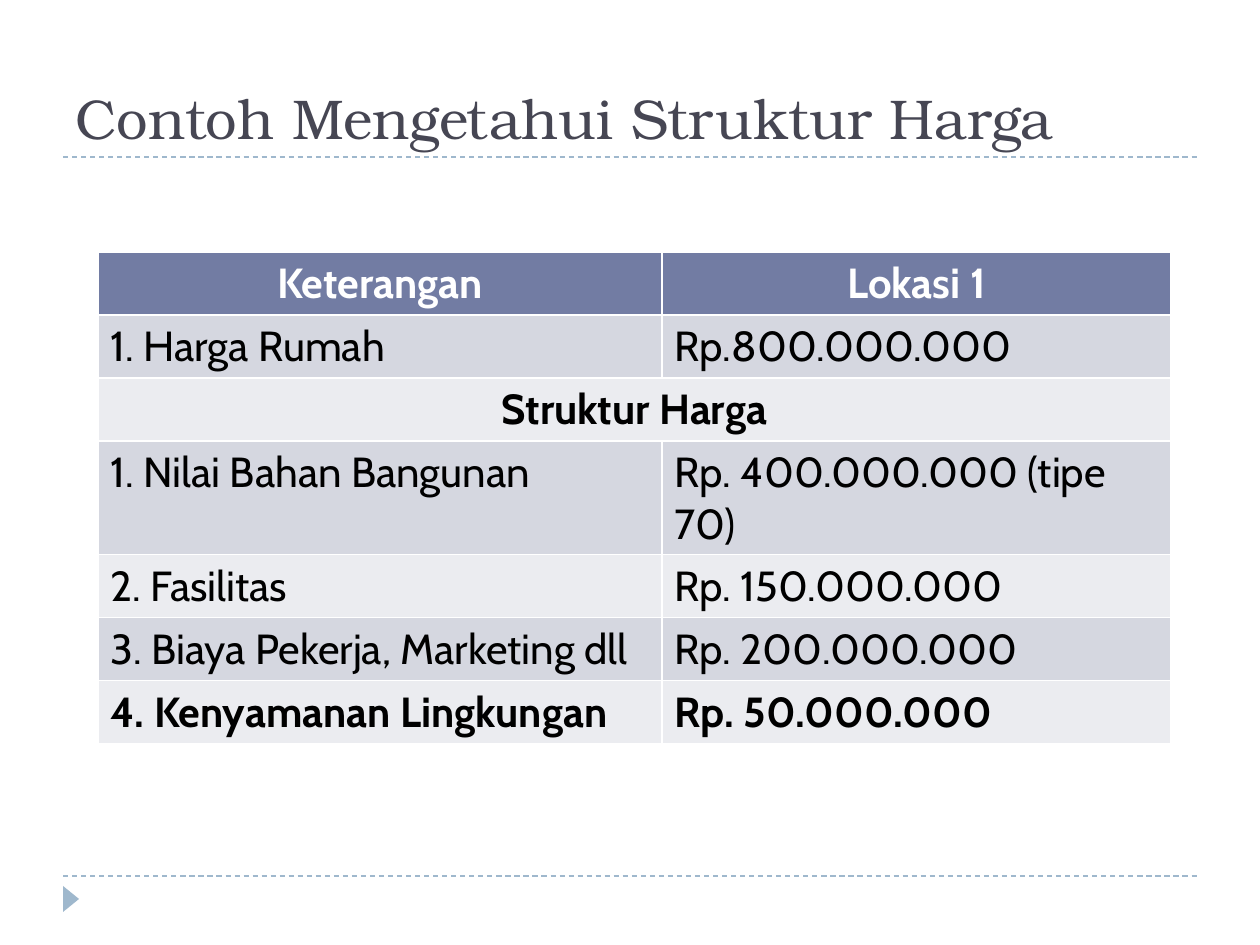
from lxml.etree import SubElement
from pptx import Presentation
from pptx.dml.color import RGBColor
from pptx.enum.dml import MSO_LINE
from pptx.enum.shapes import MSO_CONNECTOR, MSO_SHAPE
from pptx.enum.text import MSO_ANCHOR, PP_ALIGN
from pptx.oxml.ns import qn
from pptx.util import Pt

TITLE = "Contoh Mengetahui Struktur Harga"
ROWS = [
    ("header", "Keterangan", "Lokasi 1"),
    ("plain", "1. Harga Rumah", "Rp.800.000.000"),
    ("section", "Struktur Harga"),
    ("item", "1. Nilai Bahan Bangunan", "Rp. 400.000.000 (tipe 70)"),
    ("item", "2. Fasilitas", "Rp. 150.000.000"),
    ("item", "3. Biaya Pekerja, Marketing dll", "Rp. 200.000.000"),
    ("total", "4. Kenyamanan Lingkungan", "Rp. 50.000.000"),
]
COLUMN_WIDTHS = (564, 509)
ROW_HEIGHT = 45
HANGING_INDENT = 24
RULE_POSITIONS = (876, 157)
HEADER_FILL = "727CA3"
BAND_FILLS = ("EBECF0", "D5D7E0")
ACCENT = "9FB8CD"
TITLE_FORMAT = {"name": "TeX Gyre Bonum", "size": Pt(32), "bold": False}
CELL_FORMAT = {"name": "Cabin", "size": Pt(24)}


def px(value):
    return round(value * 914400 / 126)


def color(value):
    return RGBColor.from_string(value)


def paint(fill, value):
    fill.solid()
    fill.fore_color.rgb = color(value)


def format_font(font, values, text_color):
    for name, value in values.items():
        setattr(font, name, value)
    font.color.rgb = color(text_color)


def add_rule(slide, y):
    rule = slide.shapes.add_connector(
        MSO_CONNECTOR.STRAIGHT, px(63), px(y), px(1197), px(y))
    rule.line.width = Pt(0.75)
    rule.line.color.rgb = color(ACCENT)
    rule.line.dash_style = MSO_LINE.DASH
    SubElement(rule._element.spPr, qn("a:effectLst"))


def add_marker(slide):
    marker = slide.shapes.add_shape(
        MSO_SHAPE.ISOSCELES_TRIANGLE, px(58), px(891), px(26), px(16))
    marker.rotation = 90
    marker.shadow.inherit = False
    paint(marker.fill, ACCENT)
    marker.line.fill.background()


def add_title(slide):
    box = slide.shapes.add_textbox(px(63), px(21), px(1134), px(136))
    frame = box.text_frame
    frame.word_wrap = True
    frame.vertical_anchor = MSO_ANCHOR.BOTTOM
    run = frame.paragraphs[0].add_run()
    run.text = TITLE
    format_font(run.font, TITLE_FORMAT, "464653")


def add_borders(cell):
    properties = cell._tc.get_or_add_tcPr()
    for side in ("lnL", "lnR", "lnT", "lnB"):
        line = SubElement(properties, qn(f"a:{side}"), w=str(Pt(1)))
        solid = SubElement(line, qn("a:solidFill"))
        SubElement(solid, qn("a:srgbClr"), val="FFFFFF")


def fill_cell(cell, text, kind, row, column):
    header = kind == "header"
    add_borders(cell)
    paint(cell.fill, HEADER_FILL if header else BAND_FILLS[row % 2])
    paragraph = cell.text_frame.paragraphs[0]
    if kind in ("header", "section"):
        paragraph.alignment = PP_ALIGN.CENTER
    if kind in ("item", "total") and column == 0:
        properties = paragraph._p.get_or_add_pPr()
        properties.set("marL", str(px(HANGING_INDENT)))
        properties.set("indent", str(-px(HANGING_INDENT)))
    run = paragraph.add_run()
    run.text = text
    bold = kind in ("header", "section", "total")
    format_font(run.font, {**CELL_FORMAT, "bold": bold},
                "FFFFFF" if header else "000000")


def add_price_table(slide):
    table = slide.shapes.add_table(
        len(ROWS), len(COLUMN_WIDTHS), px(98), px(252),
        px(sum(COLUMN_WIDTHS)), px(ROW_HEIGHT * len(ROWS))).table
    for column, width in zip(table.columns, COLUMN_WIDTHS):
        column.width = px(width)
    for row, (kind, *texts) in enumerate(ROWS):
        table.rows[row].height = px(ROW_HEIGHT)
        if kind == "section":
            table.cell(row, 0).merge(table.cell(row, len(COLUMN_WIDTHS) - 1))
        for column, text in enumerate(texts):
            fill_cell(table.cell(row, column), text, kind, row, column)


def main():
    presentation = Presentation()
    presentation.slide_width = px(1260)
    presentation.slide_height = px(945)
    slide = presentation.slides.add_slide(presentation.slide_layouts[6])
    for y in RULE_POSITIONS:
        add_rule(slide, y)
    add_marker(slide)
    add_title(slide)
    add_price_table(slide)
    presentation.save("out.pptx")


if __name__ == "__main__":
    main()
